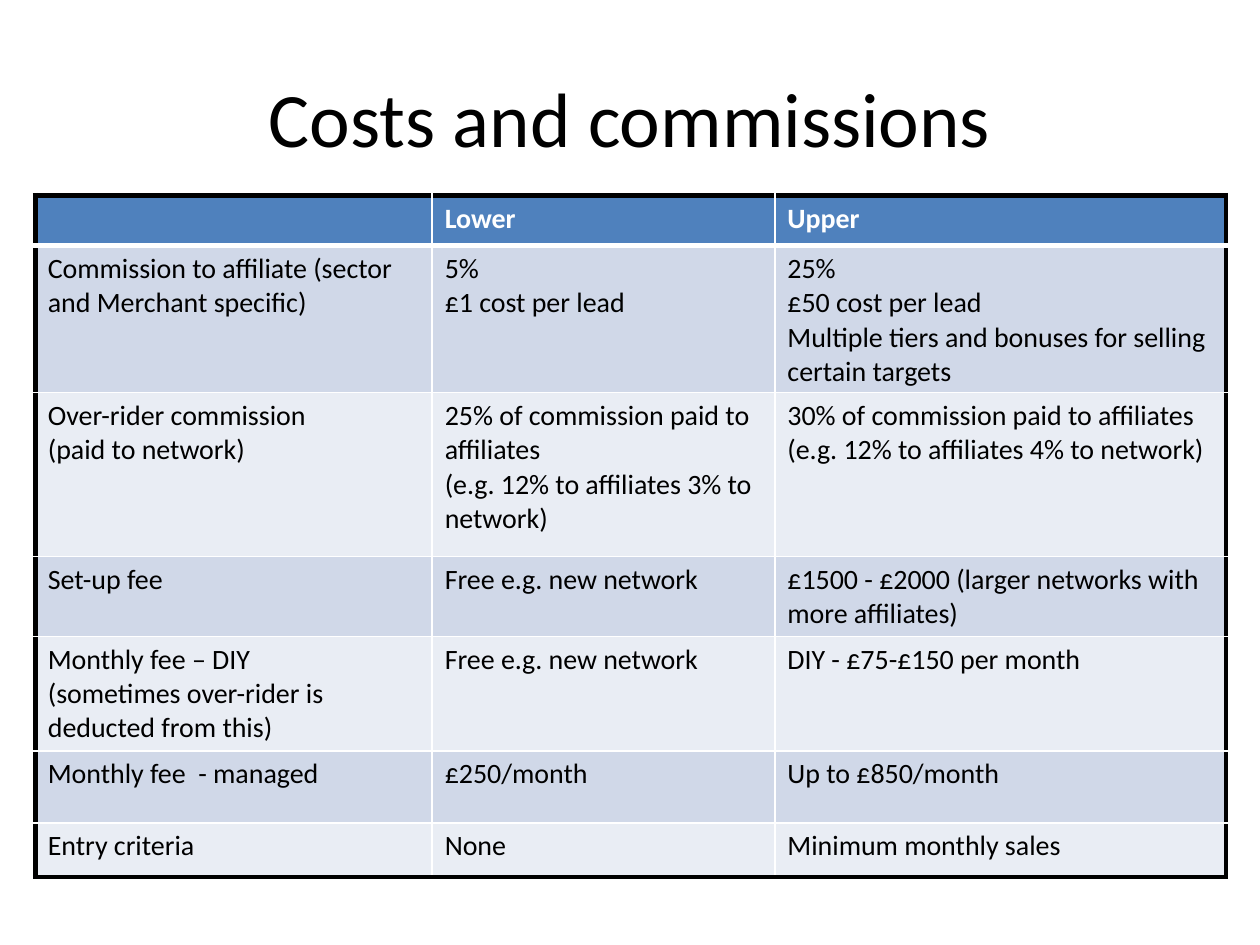
import pptx
import pptx.dml.color
import pptx.enum.text
import pptx.oxml.ns
import pptx.util
from lxml import etree

BLACK = pptx.dml.color.RGBColor(0x00, 0x00, 0x00)
WHITE = pptx.dml.color.RGBColor(0xFF, 0xFF, 0xFF)
HEADER_BLUE = pptx.dml.color.RGBColor(0x4F, 0x81, 0xBD)
BAND_DARK = pptx.dml.color.RGBColor(0xD0, 0xD8, 0xE8)
BAND_LIGHT = pptx.dml.color.RGBColor(0xE9, 0xED, 0xF4)

COLUMN_WIDTHS = [3.15, 2.72, 3.58]
ROW_HEIGHTS = [0.4, 1.14, 1.3, 0.62, 0.91, 0.57, 0.43]

# Each cell is a list of paragraphs; "\n" marks a line break within one.
ROWS = [
    [[], ["Lower"], ["Upper"]],
    [
        ["Commission to affiliate (sector and Merchant specific)"],
        ["5%", "£1 cost per lead"],
        ["25%", "£50 cost per lead",
         "Multiple tiers and bonuses for selling certain targets"],
    ],
    [
        ["Over-rider commission", "(paid to network)"],
        ["25% of commission paid to affiliates",
         "(e.g. 12% to affiliates 3% to network)"],
        ["30% of commission paid to affiliates",
         "(e.g. 12% to affiliates 4% to network)"],
    ],
    [
        ["Set-up fee"],
        ["Free e.g. new network"],
        ["£1500 - £2000 (larger networks with more affiliates)"],
    ],
    [
        ["Monthly fee – DIY\n(sometimes over-rider is deducted from this)"],
        ["Free e.g. new network"],
        ["DIY - £75-£150 per month"],
    ],
    [["Monthly fee  - managed"], ["£250/month"], ["Up to £850/month"]],
    [["Entry criteria"], ["None"], ["Minimum monthly sales"]],
]


def add_text(paragraph, text, size, color, bold=False):
    for index, line in enumerate(text.split("\n")):
        if index:
            paragraph.add_line_break()
        run = paragraph.add_run()
        run.text = line
        run.font.name = "Calibri"
        run.font.size = pptx.util.Pt(size)
        run.font.bold = bold
        run.font.color.rgb = color


def set_border(cell, side, color, width):
    """Draw one cell edge; side is L, R, T or B, called in that order before the fill."""
    properties = cell._tc.get_or_add_tcPr()
    line = etree.SubElement(properties, pptx.oxml.ns.qn(f"a:ln{side}"),
                            w=str(pptx.util.Pt(width)))
    fill = etree.SubElement(line, pptx.oxml.ns.qn("a:solidFill"))
    etree.SubElement(fill, pptx.oxml.ns.qn("a:srgbClr"), val=str(color))


presentation = pptx.Presentation()
presentation.slide_width = pptx.util.Inches(10)
presentation.slide_height = pptx.util.Inches(7.5)
slide = presentation.slides.add_slide(presentation.slide_layouts[6])

# Title
title = slide.shapes.add_textbox(
    int(presentation.slide_width * 0.05), int(presentation.slide_height * 0.04),
    int(presentation.slide_width * 0.9), pptx.util.Inches(1.25))
title.text_frame.word_wrap = True
title.text_frame.vertical_anchor = pptx.enum.text.MSO_ANCHOR.MIDDLE
title_paragraph = title.text_frame.paragraphs[0]
title_paragraph.alignment = pptx.enum.text.PP_ALIGN.CENTER
add_text(title_paragraph, "Costs and commissions", 44, BLACK)

# Cost table
table = slide.shapes.add_table(
    len(ROW_HEIGHTS), len(COLUMN_WIDTHS),
    pptx.util.Inches(0.28), pptx.util.Inches(1.55),
    pptx.util.Inches(sum(COLUMN_WIDTHS)), pptx.util.Inches(sum(ROW_HEIGHTS))).table
for column, width in zip(table.columns, COLUMN_WIDTHS):
    column.width = pptx.util.Inches(width)
for row, height in zip(table.rows, ROW_HEIGHTS):
    row.height = pptx.util.Inches(height)

last_row, last_column = len(ROW_HEIGHTS) - 1, len(COLUMN_WIDTHS) - 1
for row_index, row_texts in enumerate(ROWS):
    is_header = row_index == 0
    band = HEADER_BLUE if is_header else BAND_DARK if row_index % 2 else BAND_LIGHT
    for column_index, texts in enumerate(row_texts):
        cell = table.cell(row_index, column_index)

        # Black outer frame, white inner grid, heavier rule under the header
        outer_edges = {
            "L": column_index == 0,
            "R": column_index == last_column,
            "T": is_header,
            "B": row_index == last_row,
        }
        for side, is_outer in outer_edges.items():
            under_header = (side, row_index) in (("B", 0), ("T", 1))
            set_border(cell, side, BLACK if is_outer else WHITE,
                       3 if is_outer or under_header else 1)
        cell.fill.solid()
        cell.fill.fore_color.rgb = band

        for text_index, text in enumerate(texts):
            frame = cell.text_frame
            paragraph = frame.add_paragraph() if text_index else frame.paragraphs[0]
            add_text(paragraph, text, 16, WHITE if is_header else BLACK, is_header)

presentation.save("out.pptx")
